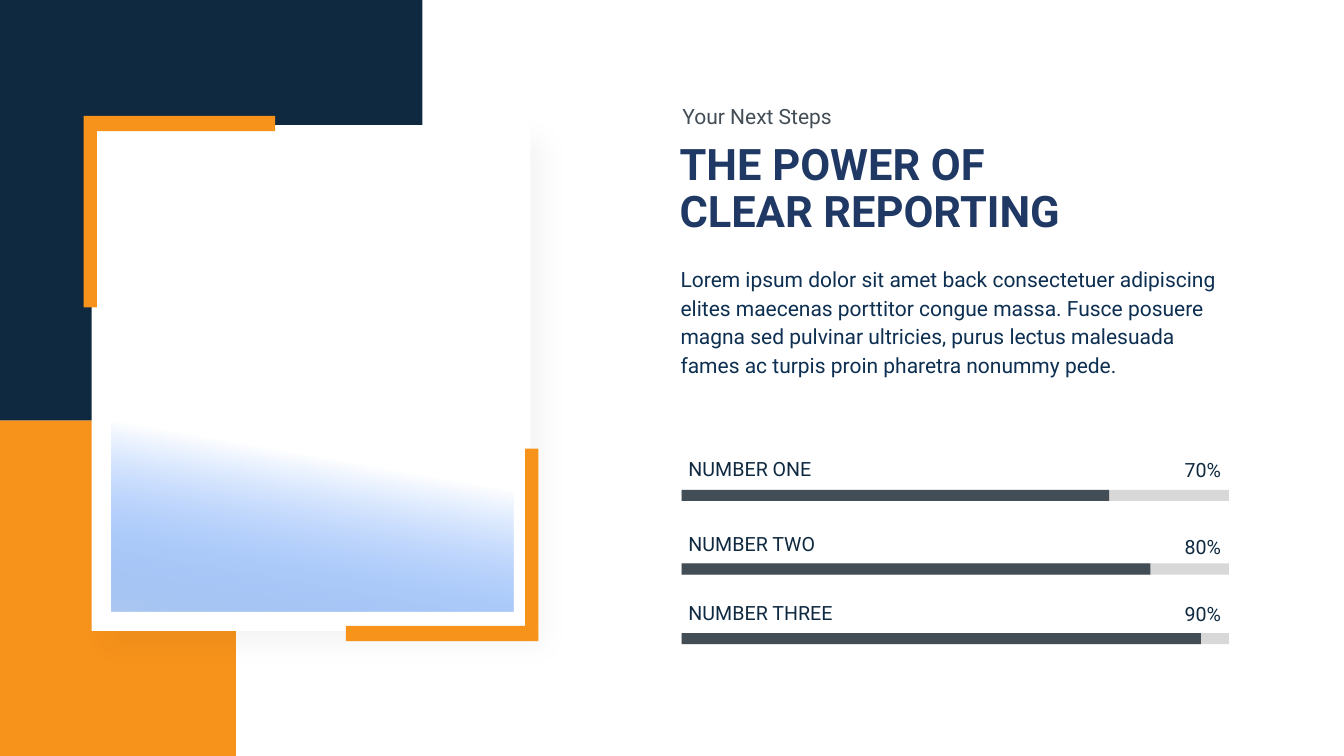
import pptx
import pptx.util
import pptx.dml.color
import pptx.enum.shapes
import pptx.enum.text
import pptx.oxml
import pptx.oxml.ns

Inches = pptx.util.Inches
RGBColor = pptx.dml.color.RGBColor
ALIGN = pptx.enum.text.PP_ALIGN

NAVY = RGBColor(0x0E, 0x29, 0x40)
ORANGE = RGBColor(0xF7, 0x93, 0x1B)
WHITE = RGBColor(0xFF, 0xFF, 0xFF)
TITLE_BLUE = RGBColor(0x1F, 0x38, 0x64)
BODY_BLUE = RGBColor(0x0D, 0x2F, 0x51)
SLATE = RGBColor(0x43, 0x4D, 0x56)
TRACK_GRAY = RGBColor(0xD8, 0xD8, 0xD8)

FONT = "Roboto"
TRACK_LEFT, TRACK_WIDTH, TRACK_HEIGHT = 6.76, 5.43, 0.11

CORNERS = [
    [(5.21, 4.45), (5.21, 6.21), (3.43, 6.21), (3.43, 6.36), (5.34, 6.36), (5.34, 4.45)],
    [(0.83, 3.05), (0.96, 3.05), (0.96, 1.3), (2.73, 1.3), (2.73, 1.15), (0.83, 1.15)],
]
PROGRESS = [
    ("NUMBER ONE", "70%", 4.24, 4.48, 4.49, 4.86),
    ("NUMBER TWO", "80%", 4.65, 5.23, 5.26, 5.59),
    ("NUMBER THREE", "90%", 5.15, 5.91, 5.92, 6.28),
]
BODY = ("Lorem ipsum dolor sit amet back consectetuer adipiscing elites maecenas "
        "porttitor congue massa. Fusce posuere magna sed pulvinar ultricies, purus "
        "lectus malesuada fames ac turpis proin pharetra nonummy pede.")


def parse_drawing(tag, attributes, content):
    """Return a drawing element built from its tag, attributes and inner XML."""
    return pptx.oxml.parse_xml(
        f'<a:{tag} {pptx.oxml.ns.nsdecls("a")} {attributes}>{content}</a:{tag}>')


def add_block(page, left, top, width, height, color):
    """Add a plain filled rectangle without outline or shadow."""
    block = page.shapes.add_shape(
        pptx.enum.shapes.MSO_SHAPE.RECTANGLE,
        Inches(left), Inches(top), Inches(width), Inches(height))
    block.shadow.inherit = False
    block.fill.solid()
    block.fill.fore_color.rgb = color
    block.line.fill.background()
    return block


def add_card(page):
    """Add the white card with its soft shadow."""
    card = add_block(page, 0.91, 1.24, 4.35, 5.02, WHITE)
    properties = card._element.spPr
    properties.remove(properties.find(pptx.oxml.ns.qn("a:effectLst")))
    properties.append(parse_drawing(
        "effectLst", "",
        f'<a:outerShdw blurRad="{pptx.util.Pt(18)}" dist="{pptx.util.Pt(15)}" '
        'dir="2700000" algn="tl" rotWithShape="0"><a:srgbClr val="000000">'
        '<a:alpha val="4000"/></a:srgbClr></a:outerShdw>'))


def add_corners(page):
    """Add the two orange corner brackets as one outline."""
    outlines = [[(Inches(x), Inches(y)) for x, y in points] for points in CORNERS]
    first, second = outlines
    builder = page.shapes.build_freeform(*first[0])
    builder.add_line_segments(first[1:], close=True)
    builder.move_to(*second[0])
    builder.add_line_segments(second[1:], close=True)
    corners = builder.convert_to_shape()
    corners.shadow.inherit = False
    corners.fill.solid()
    corners.fill.fore_color.rgb = ORANGE
    corners.line.fill.background()


def add_fade(page):
    """Add the blue panel that fades out towards the top."""
    fade = add_block(page, 1.11, 4.13, 3.98, 1.94, WHITE)
    clear = '<a:srgbClr val="2779FF"><a:alpha val="0"/></a:srgbClr>'
    gradient = parse_drawing(
        "gradFill", 'rotWithShape="1"',
        '<a:gsLst><a:gs pos="0"><a:srgbClr val="ACC8F1"/></a:gs>'
        f'<a:gs pos="72000">{clear}</a:gs><a:gs pos="100000">{clear}</a:gs></a:gsLst>'
        f'<a:lin ang="{280 * 60000}" scaled="0"/>')
    properties = fade._element.spPr
    properties.replace(properties.find(pptx.oxml.ns.qn("a:solidFill")), gradient)


def write_text(box, lines, size, color, bold=False, align=ALIGN.LEFT, spacing=1.0):
    """Fill a box or placeholder with formatted lines, one paragraph each."""
    frame = box.text_frame
    frame.word_wrap = True
    frame.auto_size = pptx.enum.text.MSO_AUTO_SIZE.NONE
    frame.vertical_anchor = pptx.enum.text.MSO_ANCHOR.TOP
    for index, line in enumerate(lines):
        para = frame.add_paragraph() if index else frame.paragraphs[0]
        para.alignment = align
        para.line_spacing = spacing
        para.space_before = pptx.util.Pt(0)
        span = para.add_run()
        span.text = line
        span.font.name = FONT
        span.font.size = pptx.util.Pt(size)
        span.font.bold = bold
        span.font.color.rgb = color


def place(box, left, top, width, height):
    """Move a placeholder to a position and size in inches."""
    box.left, box.top = Inches(left), Inches(top)
    box.width, box.height = Inches(width), Inches(height)


def add_label(page, left, top, width, height, text, size, color, align=ALIGN.LEFT):
    """Add a one-line text box."""
    box = page.shapes.add_textbox(
        Inches(left), Inches(top), Inches(width), Inches(height))
    write_text(box, [text], size, color, align=align)


def add_progress(page, name, percent, filled, name_top, percent_top, bar_top):
    """Add a labelled progress bar."""
    add_block(page, TRACK_LEFT, bar_top, TRACK_WIDTH, TRACK_HEIGHT, TRACK_GRAY)
    add_block(page, TRACK_LEFT, bar_top, filled, TRACK_HEIGHT, SLATE)
    add_label(page, 6.73, name_top, 4.28, 0.34, name, 14, NAVY)
    add_label(page, 11.22, percent_top, 0.99, 0.34, percent, 14, NAVY, ALIGN.RIGHT)


def fill_placeholders(page):
    """Place and fill the title and the body paragraph."""
    title, body = page.shapes.title, page.placeholders[1]
    place(title, 6.64, 1.37, 5.8, 1.04)
    write_text(title, ["THE POWER OF", "CLEAR REPORTING"], 31, TITLE_BLUE,
               bold=True, spacing=0.9)
    place(body, 6.65, 2.56, 5.55, 1.54)
    properties = body.text_frame.paragraphs[0]._p.get_or_add_pPr()
    properties.set("marL", "0")
    properties.set("indent", "0")
    properties.append(parse_drawing("buNone", "", ""))
    write_text(body, [BODY], 15, BODY_BLUE, spacing=1.14)


def main():
    """Build the slide and save it."""
    deck = pptx.Presentation()
    deck.slide_width, deck.slide_height = Inches(13.33), Inches(7.5)
    page = deck.slides.add_slide(deck.slide_layouts[1])
    add_block(page, 0, 4.17, 2.34, 3.33, ORANGE)
    add_block(page, 0, 0, 4.19, 4.17, NAVY)
    add_card(page)
    add_corners(page)
    fill_placeholders(page)
    add_label(page, 6.67, 0.98, 3.06, 0.35, "Your Next Steps", 15, SLATE)
    for row in PROGRESS:
        add_progress(page, *row)
    add_fade(page)
    deck.save("out.pptx")


if __name__ == "__main__":
    main()
